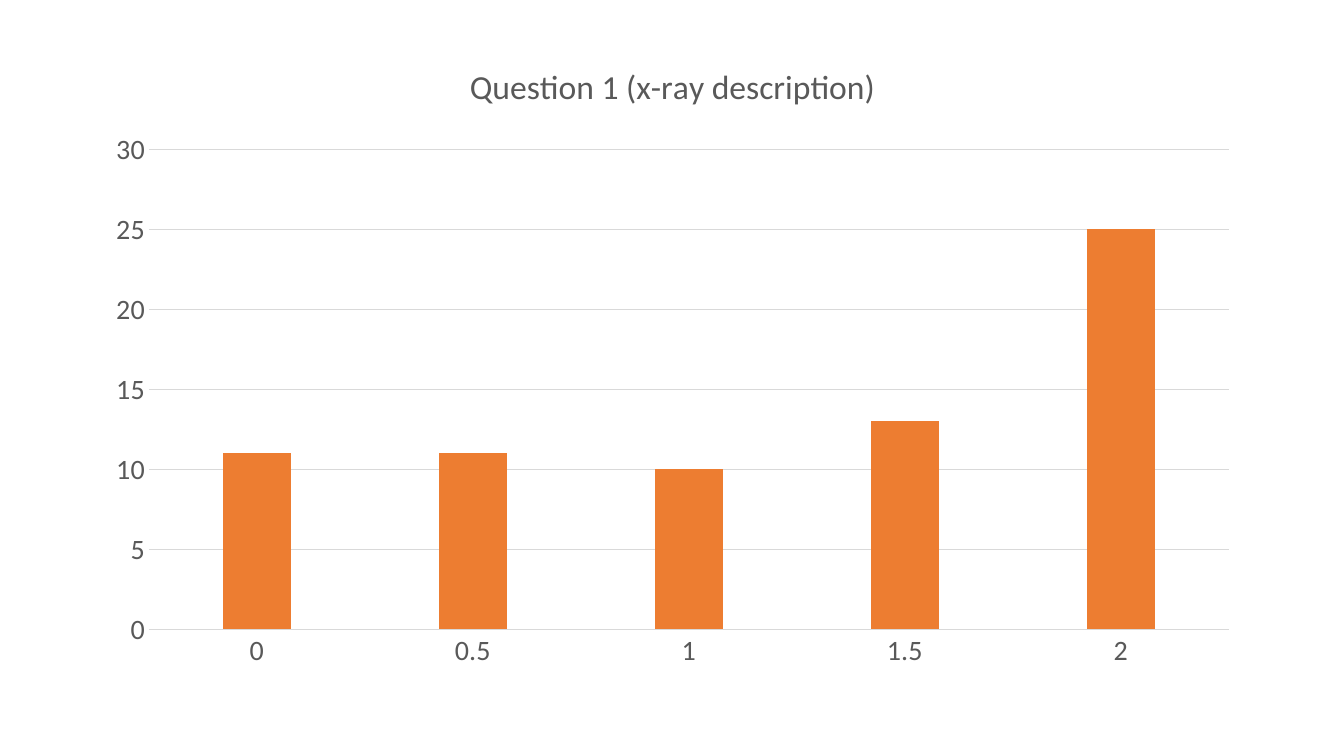
"""Build a slide with a column chart of marks for question 1."""
from pptx import Presentation
from pptx.chart.data import CategoryChartData as ChartData
from pptx.dml.color import RGBColor
from pptx.enum.chart import XL_CHART_TYPE as Kind, XL_TICK_MARK as Tick
from pptx.util import Pt

PX = 914400 / 100.8
GREY = RGBColor(0x59, 0x59, 0x59)
PALE = RGBColor(0xD9, 0xD9, 0xD9)
ORANGE = RGBColor(0xED, 0x7D, 0x31)
FACE = "Calibri"
TITLE = "Question 1 (x-ray description)"
MARKS = {"0": 11, "0.5": 11, "1": 10, "1.5": 13, "2": 25}


def px(num):
    """Turn pixels into EMU."""
    return round(num * PX)


def style(font, size, color=GREY, bold=False):
    """Set the look of a font."""
    font.name = FACE
    font.size = Pt(size)
    font.bold = bold
    font.color.rgb = color


def put_text(frame, text, **look):
    """Write text in a frame with the given format."""
    frame.text = text
    style(frame.paragraphs[0].runs[0].font, **look)


def rule(line):
    """Draw a line thin and pale."""
    line.color.rgb = PALE
    line.width = Pt(0.75)


def set_axis(axis):
    """Give an axis its labels and no ticks."""
    axis.major_tick_mark = axis.minor_tick_mark = Tick.NONE
    style(axis.tick_labels.font, 20)


def add_columns(slide, title, marks, box):
    """Add a titled column chart in a box of pixels."""
    data = ChartData()
    data.categories = list(marks)
    data.add_series(title, list(marks.values()))
    frame = slide.shapes.add_chart(Kind.COLUMN_CLUSTERED, *map(px, box), data)
    chart = frame.chart
    chart.has_legend = False
    chart.has_title = True
    put_text(chart.chart_title.text_frame, title, size=24)
    chart.chart_title.include_in_layout = False

    plot = chart.plots[0]
    plot.gap_width = 219
    plot.overlap = -27
    plot.vary_by_categories = False
    fill = plot.series[0].format.fill
    fill.solid()
    fill.fore_color.rgb = ORANGE

    cats, vals = chart.category_axis, chart.value_axis
    set_axis(cats)
    set_axis(vals)
    rule(cats.format.line)
    vals.format.line.fill.background()
    rule(vals.major_gridlines.format.line)
    vals.minimum_scale, vals.maximum_scale, vals.major_unit = 0, 30, 5


def main():
    """Make the deck and save it."""
    deck = Presentation()
    deck.slide_width, deck.slide_height = px(1344), px(756)
    slide = deck.slides.add_slide(deck.slide_layouts[6])
    add_columns(slide, TITLE, MARKS, (93, 40, 1159, 641))
    deck.save("out.pptx")


if __name__ == "__main__":
    main()
